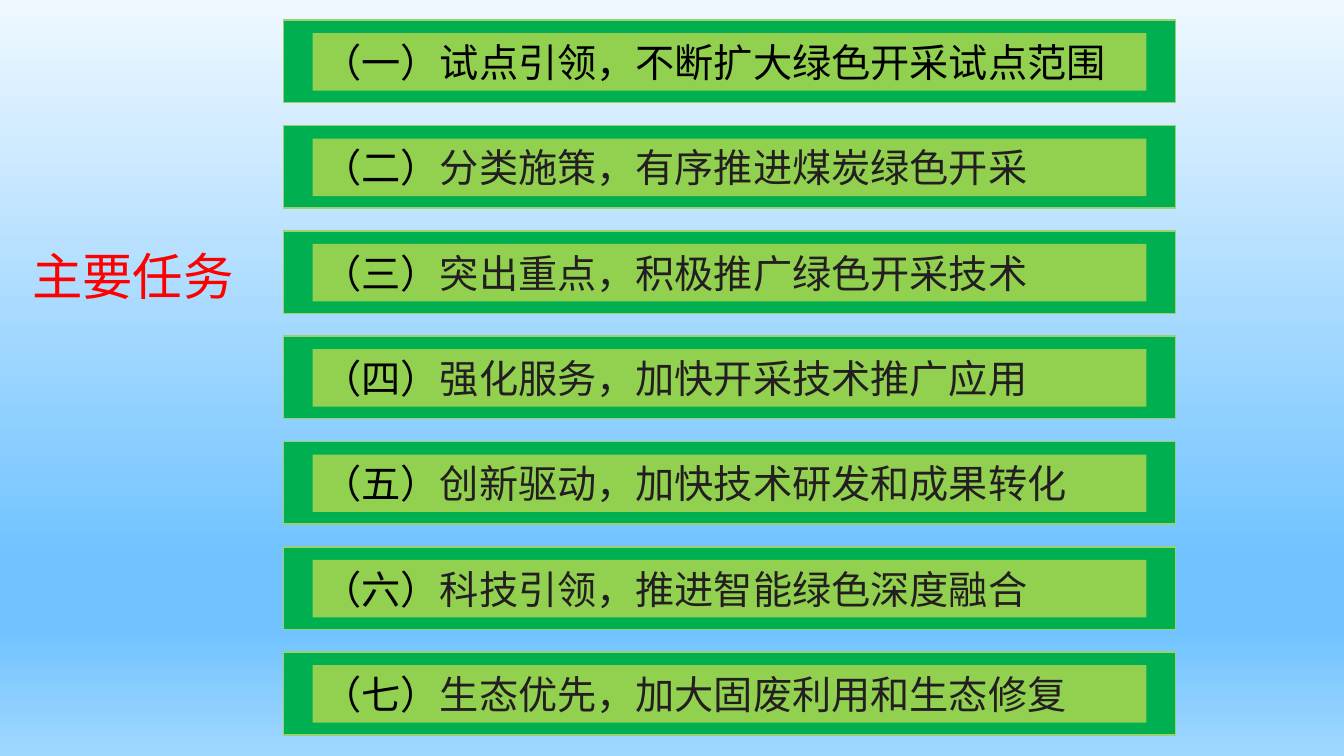
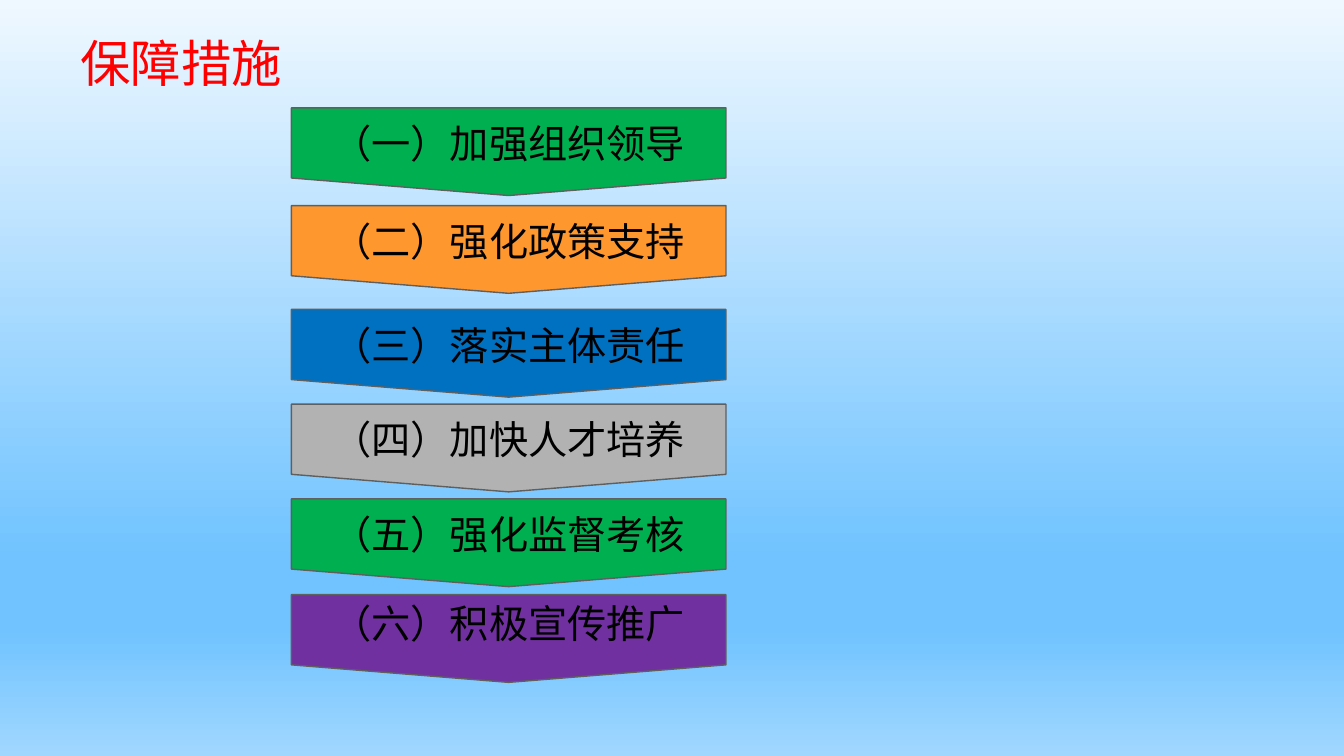
"""Build two slides on green mining: the main tasks and the supporting measures."""
from lxml import etree
from pptx import Presentation
from pptx.dml.color import RGBColor
from pptx.enum.shapes import MSO_SHAPE
from pptx.enum.text import MSO_ANCHOR, PP_ALIGN
from pptx.oxml.ns import qn
from pptx.util import Inches, Pt

RECTANGLE = MSO_SHAPE.RECTANGLE
BANNER = MSO_SHAPE.FLOWCHART_OFFPAGE_CONNECTOR
MIDDLE = MSO_ANCHOR.MIDDLE
LEFT, CENTER = PP_ALIGN.LEFT, PP_ALIGN.CENTER

FONT = "Noto Sans CJK SC"
RED = RGBColor(0xFF, 0x00, 0x00)
BLACK = RGBColor(0x00, 0x00, 0x00)
INK = RGBColor(0x23, 0x1F, 0x20)
GREEN = RGBColor(0x00, 0xB0, 0x50)
LIME = RGBColor(0x92, 0xD0, 0x50)
LIME_EDGE = RGBColor(0x9D, 0xD1, 0x6F)
ORANGE = RGBColor(0xFF, 0x97, 0x2F)
BLUE = RGBColor(0x00, 0x70, 0xC0)
SILVER = RGBColor(0xB2, 0xB2, 0xB2)
PURPLE = RGBColor(0x70, 0x30, 0xA0)
GRAY_EDGE = RGBColor(0x5F, 0x5F, 0x5F)
SKY = [
    (0, RGBColor(0xEF, 0xF8, 0xFF)),
    (74, RGBColor(0x70, 0xC3, 0xFF)),
    (83, RGBColor(0x70, 0xC3, 0xFF)),
    (100, RGBColor(0xA0, 0xD7, 0xFF)),
]

FRAME_FORMAT = {
    "word_wrap": True,
    "vertical_anchor": MIDDLE,
    "margin_top": 0,
    "margin_bottom": 0,
}

TITLES = [("主要任务", 0.22, 2.38, 2.39), ("保障措施", 0.7, 0.26, 2.9)]
TASKS = [
    ("（一）", "试点引领，不断扩大绿色开采试点范围", BLACK),
    ("（二）", "分类施策，有序推进煤炭绿色开采", INK),
    ("（三）", "突出重点，积极推广绿色开采技术", INK),
    ("（四）", "强化服务，加快开采技术推广应用", INK),
    ("（五）", "创新驱动，加快技术研发和成果转化", INK),
    ("（六）", "科技引领，推进智能绿色深度融合", INK),
    ("（七）", "生态优先，加大固废利用和生态修复", INK),
]
MEASURES = [
    ("（一）加强组织领导", 1.07, GREEN, 0),
    ("（二）强化政策支持", 2.04, ORANGE, 0),
    ("（三）落实主体责任", 3.07, BLUE, 0),
    ("（四）加快人才培养", 4.01, SILVER, 0),
    ("（五）强化监督考核", 4.95, GREEN, 0),
    ("（六）积极宣传推广", 5.9, PURPLE, 0.13),
]


def write(box, spans, size, alignment=LEFT):
    """Write (text, colour) spans as one paragraph in a box."""
    frame = box.text_frame
    for name, value in FRAME_FORMAT.items():
        setattr(frame, name, value)
    para = frame.paragraphs[0]
    para.alignment = alignment
    for text, color in spans:
        span = para.add_run()
        span.text = text
        for name, value in {"name": FONT, "size": Pt(size)}.items():
            setattr(span.font, name, value)
        span.font.color.rgb = color
        east_asian = etree.SubElement(span.font._element, qn("a:ea"))
        east_asian.set("typeface", FONT)


def draw(slide, kind, place, fill, edge=None):
    """Draw a filled shape, outlined when an edge colour is given."""
    shape = slide.shapes.add_shape(kind, *map(Inches, place))
    shape.shadow.inherit = False
    shape.fill.solid()
    shape.fill.fore_color.rgb = fill
    if edge is None:
        shape.line.fill.background()
    else:
        shape.line.color.rgb = edge
        shape.line.width = Pt(1)
    return shape


deck = Presentation()
deck.slide_width = Inches(13.33)
deck.slide_height = Inches(7.5)

master = deck.slide_master
sky_fill = master.background.fill
sky_fill.gradient()
sky_fill.gradient_angle = 270
stops = master.element.find(".//" + qn("p:bg")).find(".//" + qn("a:gsLst"))
for stop in list(stops):
    stops.remove(stop)
for percent, color in SKY:
    stop = etree.SubElement(stops, qn("a:gs"), pos=str(percent * 1000))
    etree.SubElement(stop, qn("a:srgbClr"), val=str(color))

slides = []
for text, left, top, width in TITLES:
    slide = deck.slides.add_slide(deck.slide_layouts[6])
    title = slide.shapes.add_textbox(
        Inches(left), Inches(top), Inches(width), Inches(0.71))
    write(title, [(text, RED)], 36)
    slides.append(slide)
tasks_slide, measures_slide = slides

for row, (number, text, color) in enumerate(TASKS):
    top = 0.2 + row * 6.27 / (len(TASKS) - 1)
    draw(tasks_slide, RECTANGLE, (2.81, top, 8.85, 0.82), GREEN, LIME_EDGE)
    plate = draw(tasks_slide, RECTANGLE, (3.1, top + 0.13, 8.27, 0.57), LIME)
    write(plate, [(number, BLACK), (text, color)], 28)

for text, top, fill, lift in MEASURES:
    banner = draw(measures_slide, BANNER, (2.89, top, 4.31, 0.87), fill, GRAY_EDGE)
    write(banner, [(text, BLACK)], 28, CENTER)
    banner.text_frame.margin_bottom = Inches(lift)

deck.save("out.pptx")
